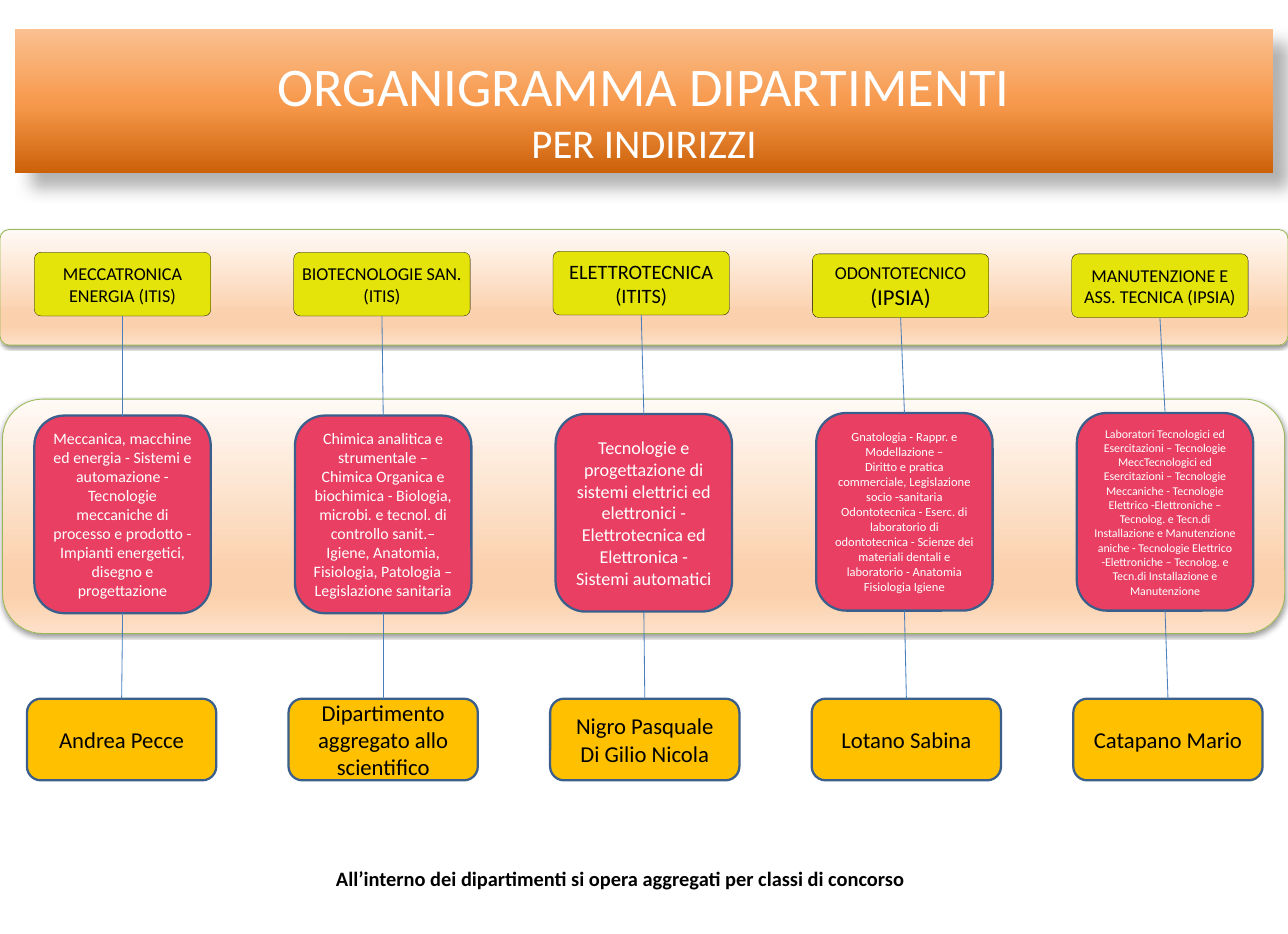
from dataclasses import dataclass
from typing import NamedTuple

from lxml.etree import SubElement
from pptx import Presentation
from pptx.dml.color import RGBColor as Rgb
from pptx.enum.shapes import MSO_CONNECTOR as Link, MSO_SHAPE as Kind
from pptx.enum.text import MSO_ANCHOR as Anchor, PP_ALIGN as Align
from pptx.oxml.ns import qn
from pptx.util import Cm, Pt


class Stop(NamedTuple):
    pos: int
    hue: str


class Shade(NamedTuple):
    alpha: int
    blur: float
    dist: float
    angle: int


class Para(NamedTuple):
    text: str
    size: float


class Area(NamedTuple):
    x: float
    y: float
    w: float
    h: float


@dataclass(frozen=True)
class Theme:
    font: str = "Calibri"
    dark: str = "000000"
    light: str = "FFFFFF"
    head: str = "E4E40A"
    body: str = "E93F63"
    lead: str = "FFC000"
    edge: str = "3A5F8C"
    rim: str = "98B955"
    link: str = "4B7EBC"
    title: tuple = (Stop(0, "CC6109"), Stop(48, "F7994C"), Stop(100, "FAC090"))
    band: tuple = (Stop(0, "FFFAF6"), Stop(74, "FBD0AC"),
                   Stop(83, "FBD0AC"), Stop(100, "FDE0C7"))
    big: float = 48
    mid: float = 36
    name: float = 20
    note: float = 18


@dataclass(frozen=True)
class Row:
    """One level of the chart: first left edge, pitch, box size and look."""
    left: float
    step: float
    w: float
    h: float
    fill: str
    ink: str
    edge: str
    line: float
    curve: float
    inset: float


@dataclass(frozen=True)
class Dept:
    head_y: float
    head: list
    body_y: float
    body: list
    lead: list


T = Theme()
HEAD = Row(1.07, 8.07, 5.49, 1.98, T.head, T.dark, T.dark, 0.25, 0.1, 0)
BODY = Row(1.07, 8.11, 5.49, 6.15, T.body, T.light, T.edge, 2, 0.17, 0.25)
LEAD = Row(0.84, 8.14, 5.89, 2.54, T.lead, T.dark, T.edge, 2, 0.17, 0.25)
LEAD_Y = 21.74
SOFT = Shade(38, 3.1, 1.6, 90)

DEPTS = [
    Dept(7.85, [Para("MECCATRONICA ENERGIA (ITIS)", 16)], 12.93,
         [Para("Meccanica, macchine ed energia - Sistemi e automazione - "
               "Tecnologie meccaniche di processo e prodotto - Impianti "
               "energetici, disegno e progettazione", 14)],
         ["Andrea Pecce"]),
    Dept(7.85, [Para("BIOTECNOLOGIE SAN.", 16), Para("(ITIS)", 16)], 12.93,
         [Para("Chimica analitica e strumentale – Chimica Organica e "
               "biochimica - Biologia, microbi. e tecnol. di controllo "
               "sanit.– Igiene, Anatomia, Fisiologia, Patologia – "
               "Legislazione sanitaria", 14)],
         ["Dipartimento aggregato allo scientifico"]),
    Dept(7.82, [Para("ELETTROTECNICA", 18), Para("(ITITS)", 18)], 12.88,
         [Para("Tecnologie e progettazione di sistemi elettrici ed "
               "elettronici - Elettrotecnica ed Elettronica - "
               "Sistemi automatici", 16)],
         ["Nigro Pasquale", "Di Gilio Nicola"]),
    Dept(7.9, [Para("ODONTOTECNICO", 16), Para("(IPSIA)", 20)], 12.85,
         [Para("Gnatologia - Rappr. e Modellazione –", 11),
          Para("Diritto e pratica commerciale, Legislazione "
               "socio -sanitaria", 11),
          Para("Odontotecnica - Eserc. di laboratorio di odontotecnica - "
               "Scienze dei materiali dentali e laboratorio - "
               "Anatomia Fisiologia Igiene", 11)],
         ["Lotano Sabina"]),
    Dept(7.9, [Para("MANUTENZIONE E ASS. TECNICA (IPSIA)", 16)], 12.85,
         [Para("Laboratori Tecnologici ed Esercitazioni – Tecnologie "
               "MeccTecnologici ed Esercitazioni – Tecnologie Meccaniche - "
               "Tecnologie Elettrico -Elettroniche – Tecnolog. e Tecn.di "
               "Installazione e Manutenzione", 10.5),
          Para("aniche - Tecnologie Elettrico -Elettroniche – Tecnolog. e "
               "Tecn.di Installazione e Manutenzione", 10.5)],
         ["Catapano Mario"]),
]


def tint(parent, hue: str):
    return SubElement(parent, qn("a:srgbClr"), val=hue)


def blend(shape, stops: tuple, angle: int) -> None:
    shape.fill.gradient()
    shape.fill.gradient_angle = 360 - angle
    group = shape.fill._xPr.find(qn("a:gradFill")).find(qn("a:gsLst"))
    group.clear()
    for stop in stops:
        tint(SubElement(group, qn("a:gs"), pos=str(stop.pos * 1000)), stop.hue)


def cast(shape, shade: Shade) -> None:
    effect = shape._element.spPr.find(qn("a:effectLst"))
    outer = SubElement(effect, qn("a:outerShdw"), blurRad=str(Pt(shade.blur)),
                       dist=str(Pt(shade.dist)), dir=str(shade.angle * 60000),
                       algn="ctr", rotWithShape="0")
    SubElement(tint(outer, T.dark), qn("a:alpha"), val=str(shade.alpha * 1000))


def stroke(line, hue: str, width: float) -> None:
    line.color.rgb = Rgb.from_string(hue)
    line.width = Pt(width)


def add(slide, kind: Kind, area: Area, curve: float = 0):
    shape = slide.shapes.add_shape(kind, *map(Cm, area))
    shape.shadow.inherit = False
    if curve:
        shape.adjustments[0] = curve
    return shape


def style(run, size: float, ink: str, bold: bool = False) -> None:
    run.font.name, run.font.size, run.font.bold = T.font, Pt(size), bold
    run.font.color.rgb = Rgb.from_string(ink)


def write(frame, paras: list, ink: str, bold: bool = False) -> None:
    frame.word_wrap = True
    frame.text = "\n".join(para.text for para in paras)
    for line, para in zip(frame.paragraphs, paras):
        line.alignment = Align.CENTER
        for run in line.runs:
            style(run, para.size, ink, bold)


def band(slide, area: Area, curve: float) -> None:
    shape = add(slide, Kind.ROUNDED_RECTANGLE, area, curve)
    blend(shape, T.band, 90)
    stroke(shape.line, T.rim, 0.75)
    cast(shape, SOFT)


def box(slide, row: Row, col: int, top: float, paras: list):
    area = Area(row.left + col * row.step, top, row.w, row.h)
    shape = add(slide, Kind.ROUNDED_RECTANGLE, area, row.curve)
    shape.fill.solid()
    shape.fill.fore_color.rgb = Rgb.from_string(row.fill)
    stroke(shape.line, row.edge, row.line)
    frame = shape.text_frame
    frame.vertical_anchor = Anchor.MIDDLE
    frame.margin_left = frame.margin_right = Cm(row.inset)
    frame.margin_top = frame.margin_bottom = Cm(row.inset / 2)
    write(frame, paras, row.ink)
    return shape


def join(slide, upper, lower) -> None:
    wire = slide.shapes.add_connector(Link.STRAIGHT, 0, 0, 0, 0)
    wire.begin_connect(upper, 2)
    wire.end_connect(lower, 0)
    stroke(wire.line, T.link, 0.75)
    SubElement(wire._element.spPr, qn("a:effectLst"))


def banner(slide) -> None:
    shape = add(slide, Kind.RECTANGLE, Area(0.46, 0.89, 39.17, 4.5))
    blend(shape, T.title, 270)
    shape.line.fill.background()
    cast(shape, Shade(30, 15, 18, 45))
    frame = shape.text_frame
    frame.vertical_anchor = Anchor.TOP
    frame.margin_left = frame.margin_right = frame.margin_bottom = 0
    frame.margin_top = Cm(0.74)
    write(frame, [Para("ORGANIGRAMMA DIPARTIMENTI\vPER INDIRIZZI", T.big)], T.light)
    line = frame.paragraphs[0]
    line.space_before = Pt(20.6)
    line.runs[1].font.size = Pt(T.mid)


def main() -> None:
    deck = Presentation()
    deck.slide_width, deck.slide_height = Cm(40.08), Cm(29.06)
    slide = deck.slides.add_slide(deck.slide_layouts[6])

    # Title and background bands
    banner(slide)
    band(slide, Area(0, 7.14, 40.08, 3.6), 0.08)
    band(slide, Area(0.08, 12.42, 39.9, 7.29), 0.17)

    # Departments, one column each
    for col, dept in enumerate(DEPTS):
        head = box(slide, HEAD, col, dept.head_y, dept.head)
        body = box(slide, BODY, col, dept.body_y, dept.body)
        names = [Para(name, T.name) for name in dept.lead]
        lead = box(slide, LEAD, col, LEAD_Y, names)
        join(slide, head, body)
        join(slide, body, lead)

    # Closing note
    note = slide.shapes.add_textbox(*map(Cm, Area(2.06, 26.82, 34.49, 1.02)))
    write(note.text_frame, [Para("All’interno dei dipartimenti si opera aggregati "
                                 "per classi di concorso", T.note)], T.dark, True)
    deck.save("out.pptx")


if __name__ == "__main__":
    main()
